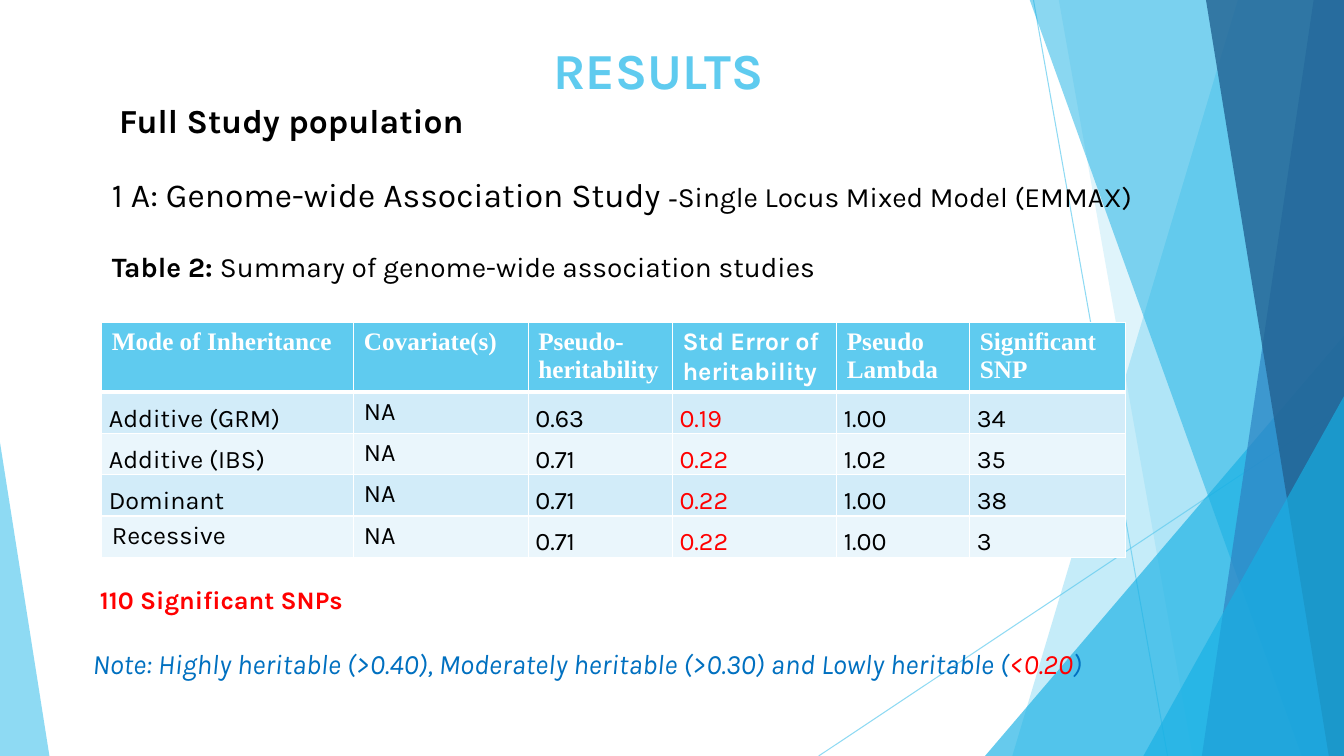
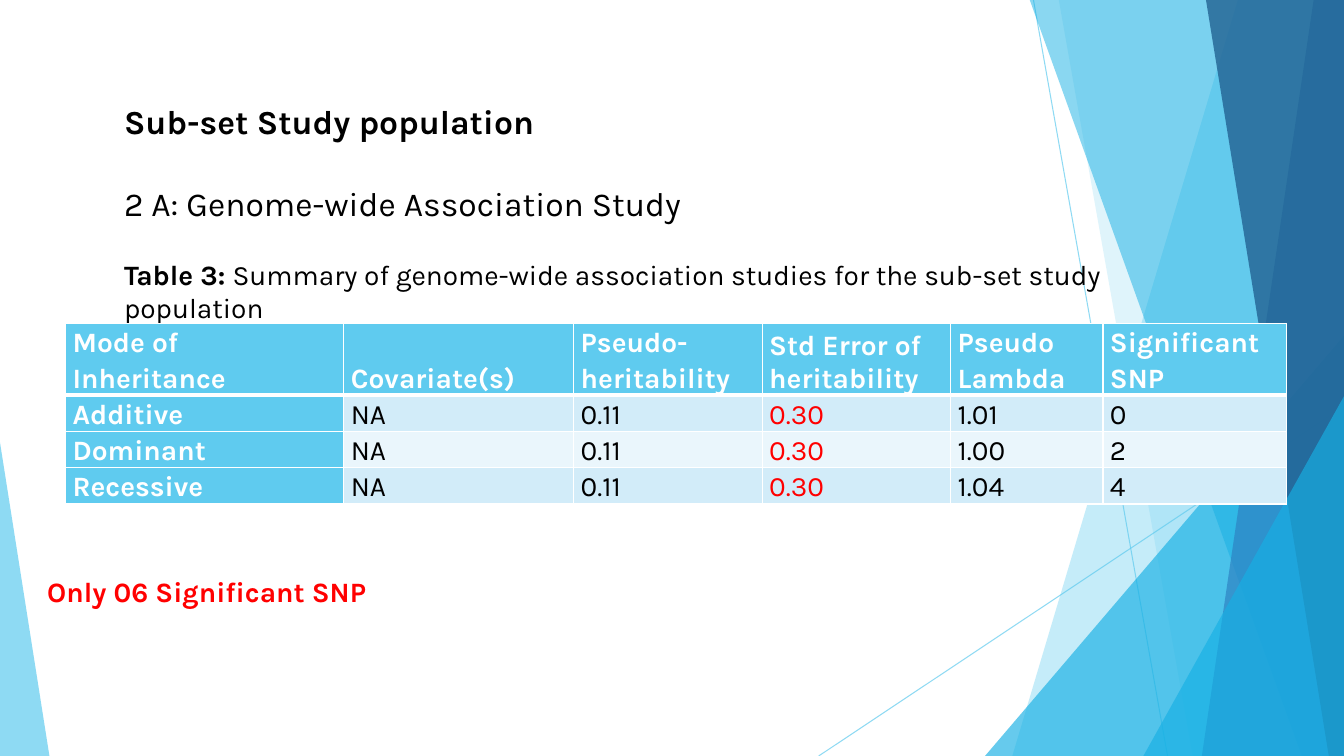
from dataclasses import dataclass

from lxml import etree
from pptx import Presentation
from pptx.dml.color import RGBColor
from pptx.enum.shapes import MSO_CONNECTOR, MSO_SHAPE
from pptx.enum.text import MSO_ANCHOR, MSO_AUTO_SIZE, PP_ALIGN
from pptx.oxml.ns import qn
from pptx.util import Inches, Pt

LINE = MSO_CONNECTOR.STRAIGHT
WEDGE = MSO_SHAPE.RIGHT_TRIANGLE
PEAK = MSO_SHAPE.ISOSCELES_TRIANGLE
TOP, BASE = MSO_ANCHOR.TOP, MSO_ANCHOR.BOTTOM
LEFT, MID = PP_ALIGN.LEFT, PP_ALIGN.CENTER
FIXED = MSO_AUTO_SIZE.NONE

Box = tuple[float, float, float, float]
Spot = tuple[float, float]


@dataclass(frozen=True)
class Theme:
    sky: str = "5FCBEF"
    cyan: str = "17B0E4"
    blue: str = "2E83C3"
    navy: str = "226292"
    note: str = "0070C0"
    red: str = "FF0000"
    black: str = "000000"
    white: str = "FFFFFF"
    odd: str = "D2ECF9"
    even: str = "EAF6FC"
    sans: str = "Karla"
    serif: str = "Times New Roman"
    huge: int = 36
    large: int = 24
    body: int = 20
    small: int = 18


THEME = Theme()


@dataclass(frozen=True)
class Run:
    text: str
    size: int = THEME.body
    color: str = THEME.black
    bold: bool = False
    slant: bool = False
    font: str = THEME.sans


@dataclass(frozen=True)
class Para:
    runs: tuple[Run, ...]
    gap: float = 0
    align: PP_ALIGN = LEFT


@dataclass(frozen=True)
class Ray:
    start: Spot
    end: Spot


@dataclass(frozen=True)
class Pane:
    spots: tuple[Spot, ...]
    color: str
    alpha: int


@dataclass(frozen=True)
class Facet:
    box: Box
    tip: float
    color: str
    alpha: int


@dataclass(frozen=True)
class Grid:
    left: float
    top: float
    cols: tuple[float, ...]
    head: float
    step: float
    rows: tuple[tuple[str, ...], ...]
    size: int
    font: str
    side: bool
    loose: frozenset[tuple[int, int]]


def band(top: float, base: float, color: str, alpha: int) -> Pane:
    return Pane(((top, -0.01), (13.33, -0.01), (13.33, 7.5), (base, 7.5)),
                color, alpha)


DECOR = (
    Ray((10.25, 0), (11.58, 7.5)),
    Ray((13.33, 4.03), (8.12, 7.5)),
    band(12.28, 10.04, THEME.sky, 36),
    band(10.5, 11.83, THEME.sky, 20),
    Facet((9.77, 3.33, 3.56, 4.17), 1, THEME.cyan, 66),
    band(10.21, 12.91, THEME.cyan, 50),
    band(13.03, 11.92, THEME.blue, 70),
    band(11.96, 13.18, THEME.navy, 80),
    Facet((11.34, 3.93, 1.99, 3.57), 1, THEME.cyan, 66),
    Facet((0, 4.39, 0.49, 3.11), 0, THEME.sky, 70),
)

HEAD = ("Mode of Inheritance", "Covariate(s)", "Pseudo-heritability",
        "Std Error of heritability", "Pseudo Lambda", "Significant SNP")
ERROR = 3

FULL = Grid(
    1.01, 3.2, (2.5, 1.73, 1.43, 1.63, 1.32, 1.54), 0.69, 0.41,
    (HEAD,
     ("Additive (GRM)", "NA", "0.63", "0.19", "1.00", "34"),
     ("Additive (IBS)", "NA", "0.71", "0.22", "1.02", "35"),
     ("Dominant", "NA", "0.71", "0.22", "1.00", "38"),
     ("Recessive", "NA", "0.71", "0.22", "1.00", "3")),
    THEME.small, THEME.serif, False,
    frozenset([(0, col) for col in range(6)]
              + [(row, 1) for row in range(1, 5)] + [(4, 0)]))

SUBSET = Grid(
    0.65, 3.21, (2.76, 2.28, 1.87, 1.87, 1.51, 1.82), 0.71, 0.36,
    (HEAD,
     ("Additive", "NA", "0.11", "0.30", "1.01", "0"),
     ("Dominant", "NA", "0.11", "0.30", "1.00", "2"),
     ("Recessive", "NA", "0.11", "0.30", "1.04", "4")),
    THEME.body, THEME.sans, True, frozenset())


def fade(shape, alpha: int) -> None:
    tint = next(shape.element.spPr.iter(qn("a:srgbClr")))
    etree.SubElement(tint, qn("a:alpha"), val=str(alpha * 1000))


def draw_ray(shapes, ray: Ray) -> None:
    line = shapes.add_connector(LINE, *map(Inches, ray.start + ray.end))
    line.line.color.rgb = RGBColor.from_string(THEME.sky)
    line.line.width = Pt(0.75)
    fade(line, 70)
    etree.SubElement(line.element.spPr, qn("a:effectLst"))


def draw_solid(shapes, part: Pane | Facet) -> None:
    if isinstance(part, Pane):
        spots = [(Inches(x), Inches(y)) for x, y in part.spots]
        path = shapes.build_freeform(*spots[0])
        path.add_line_segments(spots[1:])
        shape = path.convert_to_shape()
    else:
        shape = shapes.add_shape(PEAK, *map(Inches, part.box))
        shape.adjustments[0] = part.tip
    shape.shadow.inherit = False
    shape.fill.solid()
    shape.fill.fore_color.rgb = RGBColor.from_string(part.color)
    shape.line.fill.background()
    fade(shape, part.alpha)


def dress(layout, slide) -> None:
    group = slide.shapes.add_group_shape()
    for part in DECOR:
        if isinstance(part, Ray):
            draw_ray(group.shapes, part)
        else:
            draw_solid(group.shapes, part)
    for num, node in enumerate(group.element.iter(qn("p:cNvPr")), 100):
        node.set("id", str(num))
    layout.shapes.element.append(group.element)


def style(run, spec: Run) -> None:
    font = run.font
    font.name, font.size = spec.font, Pt(spec.size)
    font.bold, font.italic = spec.bold, spec.slant
    font.color.rgb = RGBColor.from_string(spec.color)


def write(shape, box: Box, paras: tuple[Para, ...], inset: float = 0.05) -> None:
    shape.left, shape.top, shape.width, shape.height = map(Inches, box)
    frame = shape.text_frame
    frame.word_wrap, frame.auto_size = True, FIXED
    frame.vertical_anchor = TOP
    frame.margin_top = Inches(inset)
    for index, spec in enumerate(paras):
        para = frame.add_paragraph() if index else frame.paragraphs[0]
        para.alignment, para.space_before = spec.align, Pt(spec.gap)
        for part in spec.runs:
            run = para.add_run()
            run.text = part.text
            style(run, part)


def add_text(slide, box: Box, *runs: Run):
    shape = slide.shapes.add_textbox(*map(Inches, box))
    write(shape, box, (Para(runs),))
    return shape


def edge(cell, row: int) -> None:
    props = cell._tc.get_or_add_tcPr()
    thick = {"T": row == 1, "B": row == 0}
    for side in "LRTB":
        width = Pt(3 if thick.get(side) else 1)
        line = etree.SubElement(props, qn(f"a:ln{side}"), w=str(width))
        fill = etree.SubElement(line, qn("a:solidFill"))
        etree.SubElement(fill, qn("a:srgbClr"), val=THEME.white)


def fill_cell(cell, grid: Grid, row: int, col: int) -> None:
    label = row == 0 or (grid.side and col == 0)
    edge(cell, row)
    cell.fill.solid()
    shade = THEME.sky if label else THEME.odd if row % 2 else THEME.even
    cell.fill.fore_color.rgb = RGBColor.from_string(shade)
    cell.text_frame.text = grid.rows[row][col]
    para = cell.text_frame.paragraphs[0]
    if (row, col) not in grid.loose:
        cell.vertical_anchor = BASE
        cell.margin_left = cell.margin_right = Inches(0.07)
        cell.margin_top = cell.margin_bottom = 0
        para.line_spacing = 1.0 if (row, col) == (0, ERROR) else 1.07
    ink = THEME.white if label else THEME.red if col == ERROR else THEME.black
    font = grid.font if row == 0 and col != ERROR else THEME.sans
    style(para.runs[0], Run("", grid.size, ink, label, font=font))


def add_grid(slide, grid: Grid) -> None:
    count = len(grid.rows)
    tall = grid.head + grid.step * (count - 1)
    frame = slide.shapes.add_table(
        count, len(grid.cols), Inches(grid.left), Inches(grid.top),
        Inches(sum(grid.cols)), Inches(tall))
    table = frame.table
    table.first_col = grid.side
    for col, width in enumerate(grid.cols):
        table.columns[col].width = Inches(width)
    for row in range(count):
        table.rows[row].height = Inches(grid.step if row else grid.head)
        for col in range(len(grid.cols)):
            fill_cell(table.cell(row, col), grid, row, col)


def build_full(slide) -> None:
    write(slide.shapes.title, (1.01, 0.31, 11.04, 2.52), (
        Para((Run("RESULTS", THEME.huge, THEME.sky, True),), align=MID),
        Para((Run(" ", bold=True),
              Run("Full Study population", THEME.large, bold=True))),
        Para((Run("1 A: Genome-wide Association Study ", THEME.large),
              Run("-", font=THEME.serif),
              Run("Single Locus Mixed Model (EMMAX)")), 24.5),
        Para((Run("Table 2: ", bold=True),
              Run("Summary of genome-wide association studies")), 24.5),
    ), 0.08)
    add_grid(slide, FULL)
    note = add_text(
        slide, (0.32, 6.36, 11.98, 0.44),
        Run("Note: Highly heritable (>0.40), Moderately heritable (>0.30) "
            "and Lowly heritable (", color=THEME.note, slant=True),
        Run("<0.20", color=THEME.red, slant=True),
        Run(")", color=THEME.note, slant=True))
    props = note.text_frame.paragraphs[0]._p.get_or_add_pPr()
    props.set("marL", str(Inches(0.5)))
    add_text(slide, (0.83, 5.75, 3.18, 0.4),
             Run(" 110 Significant SNPs", THEME.small, THEME.red, True))


def build_subset(slide) -> None:
    write(slide.shapes.title, (1.13, 0.6, 11.04, 2.32), (
        Para((Run("Sub-set Study population", THEME.large, bold=True),)),
        Para((Run("2 A: Genome-wide Association Study", THEME.large),), 29.5),
        Para((Run("Table 3: ", bold=True),
              Run("Summary of genome-wide association studies for the "
                  "sub-set study population")), 24.5),
    ), 0.4)
    add_grid(slide, SUBSET)
    add_text(slide, (0.3, 5.65, 3.87, 0.44),
             Run(" Only 06 Significant SNP", color=THEME.red, bold=True))


def main() -> None:
    deck = Presentation()
    deck.slide_width, deck.slide_height = Inches(13.33), Inches(7.5)
    layout = deck.slide_layouts[5]
    slides = [deck.slides.add_slide(layout) for _ in range(2)]
    dress(layout, slides[0])
    build_full(slides[0])
    build_subset(slides[1])
    deck.save("out.pptx")


if __name__ == "__main__":
    main()
